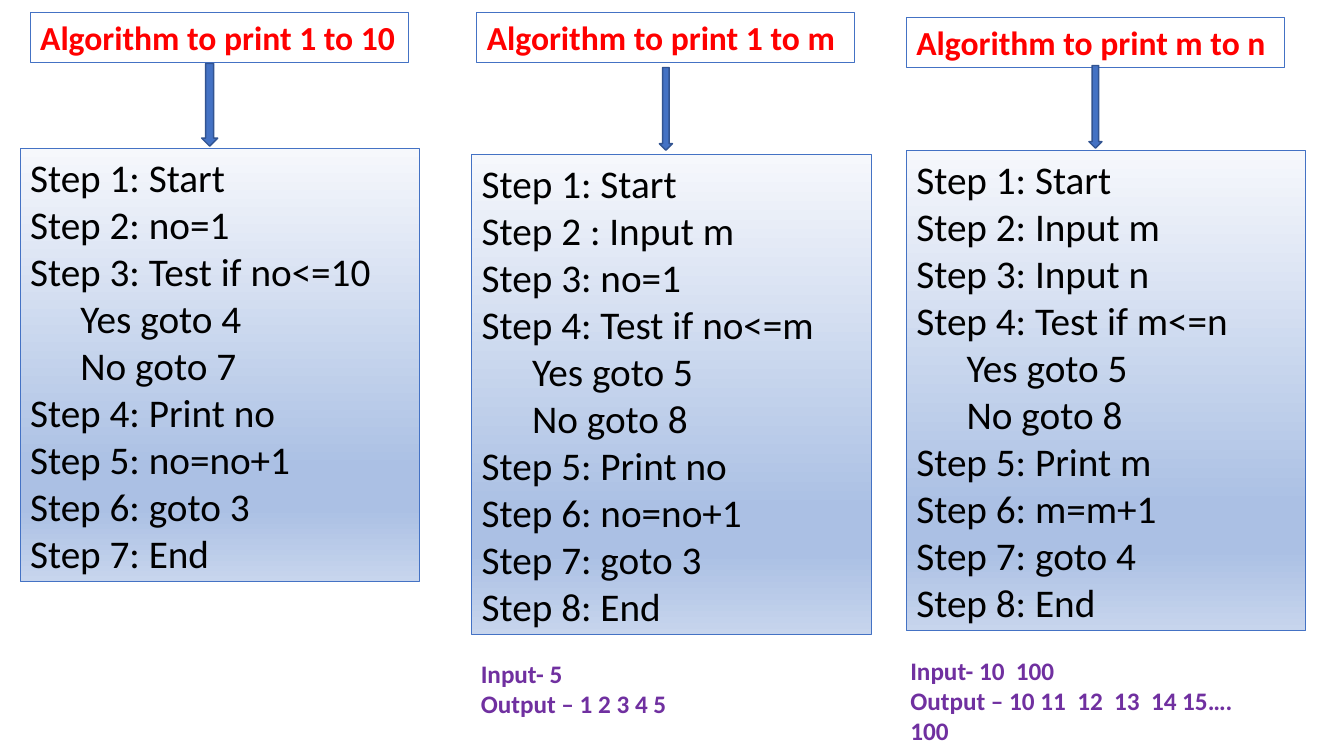
from copy import deepcopy
from pptx import Presentation
from pptx import util as u
from pptx.dml.color import RGBColor
from pptx.enum import shapes, text
from pptx.oxml.ns import qn

# Content: one entry per algorithm, left to right
ALGORITHMS = [
    {"title": "Algorithm to print 1 to 10",
     "steps": ["Step 1: Start", "Step 2: no=1", "Step 3: Test if no<=10",
               "\tYes goto 4", "\tNo goto 7", "Step 4: Print no",
               "Step 5: no=no+1", "Step 6: goto 3", "Step 7: End"],
     "example": []},
    {"title": "Algorithm to print 1 to m",
     "steps": ["Step 1: Start", "Step 2 : Input m", "Step 3: no=1",
               "Step 4: Test if no<=m", "\tYes goto 5", "\tNo goto 8",
               "Step 5: Print no", "Step 6: no=no+1", "Step 7: goto 3",
               "Step 8: End"],
     "example": ["Input- 5", "Output – 1 2 3 4 5"]},
    {"title": "Algorithm to print m to n",
     "steps": ["Step 1: Start", "Step 2: Input m", "Step 3: Input n",
               "Step 4: Test if m<=n", "\tYes goto 5", "\tNo goto 8",
               "Step 5: Print m", "Step 6: m=m+1", "Step 7: goto 4",
               "Step 8: End"],
     "example": ["Input- 10  100", "Output – 10 11  12  13  14 15…. 100"]},
]

# Left and top of each part (the arrow also has a width), in inches
LAYOUT = [
    {"title": (0.3, 0.12), "arrow": (2, 0.63, 0.16), "steps": (0.2, 1.47)},
    {"title": (4.73, 0.12), "arrow": (6.54, 0.67, 0.13), "steps": (4.68, 1.53),
     "example": (4.67, 6.48)},
    {"title": (8.99, 0.17), "arrow": (10.8, 0.65, 0.13), "steps": (8.99, 1.49),
     "example": (8.93, 6.45)},
]
TITLE_WIDTH, TITLE_HEIGHT = 3.75, 0.5
STEPS_WIDTH, ARROW_HEIGHT = 3.96, 0.82
LINE_SPACING = 1.2 / 72      # inches of line height per point of text
PADDING = 0.1                # top and bottom insets together

FONT = "Calibri"
BLACK = RGBColor(0x00, 0x00, 0x00)
RED = RGBColor(0xFF, 0x00, 0x00)
PURPLE = RGBColor(0x70, 0x30, 0xA0)
BLUE = RGBColor(0x44, 0x72, 0xC4)
DARK_BLUE = RGBColor(0x32, 0x54, 0x91)
GRADIENT = [(0, RGBColor(0xF6, 0xF8, 0xFC)), (0.74, RGBColor(0xAB, 0xC0, 0xE4)),
            (0.83, RGBColor(0xAB, 0xC0, 0xE4)), (1, RGBColor(0xC7, 0xD5, 0xED))]


def text_height(lines, size):
    return lines * size * LINE_SPACING + PADDING


def add_box(slide, kind, left, top, width, height, line=BLUE, weight=0.75):
    shape = slide.shapes.add_shape(kind, *map(u.Inches, (left, top, width, height)))
    shape.shadow.inherit = False
    shape.fill.background()
    shape.line.color.rgb = line
    shape.line.width = u.Pt(weight)
    return shape


def write(shape, lines, size, color, bold=False):
    frame = shape.text_frame
    frame.word_wrap = True
    frame.auto_size = text.MSO_AUTO_SIZE.SHAPE_TO_FIT_TEXT
    frame.vertical_anchor = text.MSO_ANCHOR.TOP
    for number, line in enumerate(lines):
        paragraph = frame.add_paragraph() if number else frame.paragraphs[0]
        paragraph.alignment = text.PP_ALIGN.LEFT
        run = paragraph.add_run()
        run.text = line
        run.font.name = FONT
        run.font.size = u.Pt(size)
        run.font.bold = bold
        run.font.color.rgb = color


def fill_gradient(shape):
    shape.fill.gradient()
    shape.fill.gradient_angle = 270
    stop_list = next(shape.element.iter(qn("a:gsLst")))
    while len(stop_list) < len(GRADIENT):
        stop_list.append(deepcopy(stop_list[0]))
    for stop, (position, color) in zip(shape.fill.gradient_stops, GRADIENT):
        stop.position = position
        stop.color.rgb = color


def main():
    presentation = Presentation()
    presentation.slide_width = u.Inches(13.33)
    presentation.slide_height = u.Inches(7.5)
    slide = presentation.slides.add_slide(presentation.slide_layouts[6])
    rectangle = shapes.MSO_SHAPE.RECTANGLE

    for algorithm, place in zip(ALGORITHMS, LAYOUT):
        # Steps
        steps = algorithm["steps"]
        panel = add_box(slide, rectangle, *place["steps"], STEPS_WIDTH,
                        text_height(len(steps), 28))
        fill_gradient(panel)
        write(panel, steps, 28, BLACK)

        # Title
        title = add_box(slide, rectangle, *place["title"], TITLE_WIDTH, TITLE_HEIGHT)
        write(title, [algorithm["title"]], 24, RED, bold=True)

        # Arrow from title to steps
        arrow = add_box(slide, shapes.MSO_SHAPE.DOWN_ARROW, *place["arrow"],
                        ARROW_HEIGHT, DARK_BLUE, 1)
        arrow.fill.solid()
        arrow.fill.fore_color.rgb = BLUE

        # Sample input and output
        if algorithm["example"]:
            left, top = place["example"]
            height = text_height(len(algorithm["example"]), 18)
            example = slide.shapes.add_textbox(
                *map(u.Inches, (left, top, TITLE_WIDTH, height)))
            write(example, algorithm["example"], 18, PURPLE, bold=True)

    presentation.save("out.pptx")


if __name__ == "__main__":
    main()
